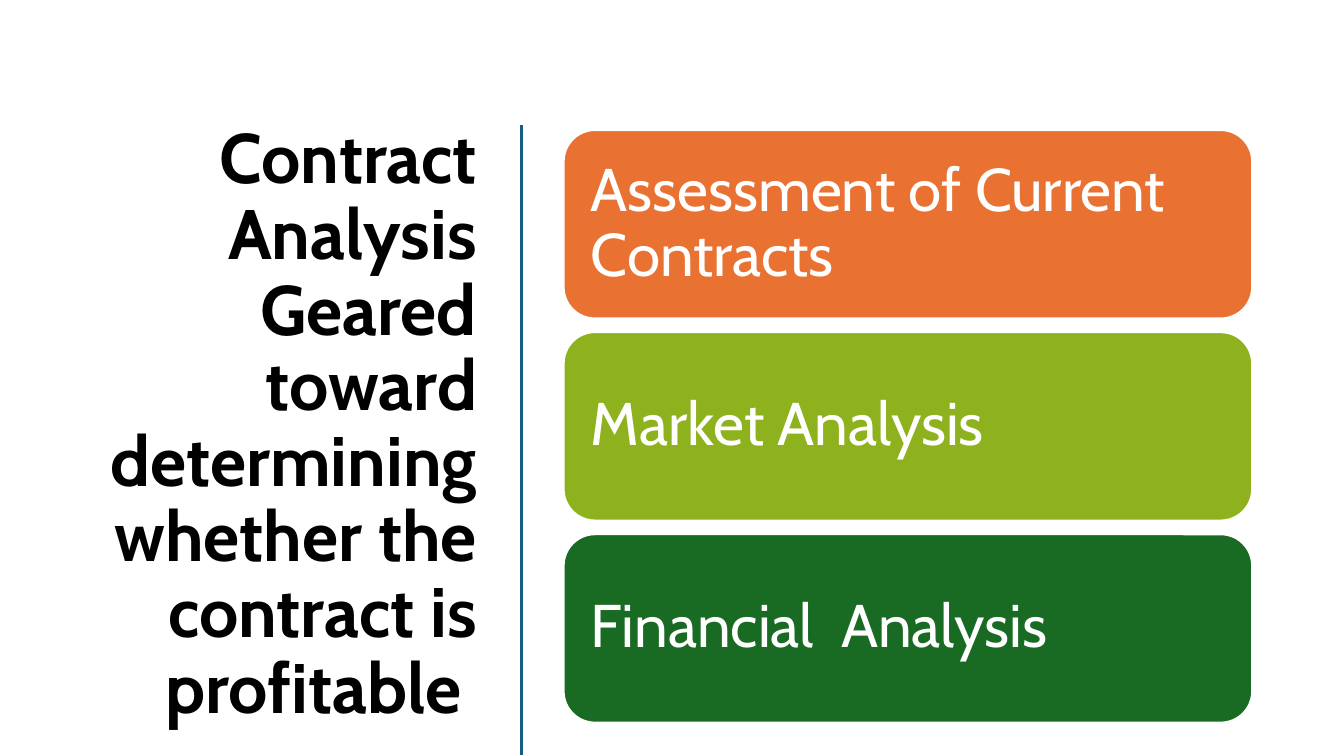
from dataclasses import dataclass

from pptx import Presentation
from pptx.dml.color import RGBColor
from pptx.enum.shapes import MSO_CONNECTOR, MSO_SHAPE
from pptx.enum.text import MSO_ANCHOR, PP_ALIGN
from pptx.oxml.ns import qn
from pptx.util import Inches, Pt


@dataclass(frozen=True)
class Theme:
    font: str = "Cabin"
    title_size: int = 50
    card_size: int = 43
    black: str = "000000"
    white: str = "FFFFFF"
    blue: str = "156082"
    orange: str = "E97132"
    lime: str = "8EB21E"
    green: str = "196B24"


THEME = Theme()


def write(frame, text, size, color, align, bold=False):
    frame.word_wrap = True
    frame.vertical_anchor = MSO_ANCHOR.MIDDLE
    frame.text = text
    paragraph = frame.paragraphs[0]
    paragraph.alignment = align
    paragraph.line_spacing = 0.9
    font = paragraph.runs[0].font
    font.name = THEME.font
    font.size = Pt(size)
    font.bold = bold
    font.color.rgb = RGBColor.from_string(color)


prs = Presentation()
prs.slide_width = Inches(13.33)
prs.slide_height = Inches(7.5)
slide = prs.slides.add_slide(prs.slide_layouts[6])

title = slide.shapes.add_textbox(Inches(0.52), Inches(1.17), Inches(4.31), Inches(6.11))
write(
    title.text_frame,
    "Contract Analysis Geared toward determining whether the contract is profitable ",
    THEME.title_size, THEME.black, PP_ALIGN.RIGHT, bold=True,
)

divider = slide.shapes.add_connector(
    MSO_CONNECTOR.STRAIGHT, Inches(5.17), Inches(1.24), Inches(5.17), Inches(7.49)
)
divider.line.color.rgb = RGBColor.from_string(THEME.blue)
divider.line.width = Pt(2)
properties = divider._element.spPr
properties.append(properties.makeelement(qn("a:effectLst"), {}))

analyses = [
    ("Assessment of Current Contracts", THEME.orange),
    ("Market Analysis", THEME.lime),
    ("Financial  Analysis", THEME.green),
]
FIRST_TOP, CARD_PITCH = 1.29, 2.005
for index, (label, color) in enumerate(analyses):
    card = slide.shapes.add_shape(
        MSO_SHAPE.ROUNDED_RECTANGLE,
        Inches(5.59), Inches(FIRST_TOP + index * CARD_PITCH), Inches(6.83), Inches(1.87),
    )
    card.shadow.inherit = False
    card.fill.solid()
    card.fill.fore_color.rgb = RGBColor.from_string(color)
    card.line.color.rgb = RGBColor.from_string(THEME.white)
    card.line.width = Pt(1.5)
    frame = card.text_frame
    frame.margin_left = frame.margin_right = Inches(0.18)
    frame.margin_top = frame.margin_bottom = Inches(0.18)
    write(frame, label, THEME.card_size, THEME.white, PP_ALIGN.LEFT)

prs.save("out.pptx")
